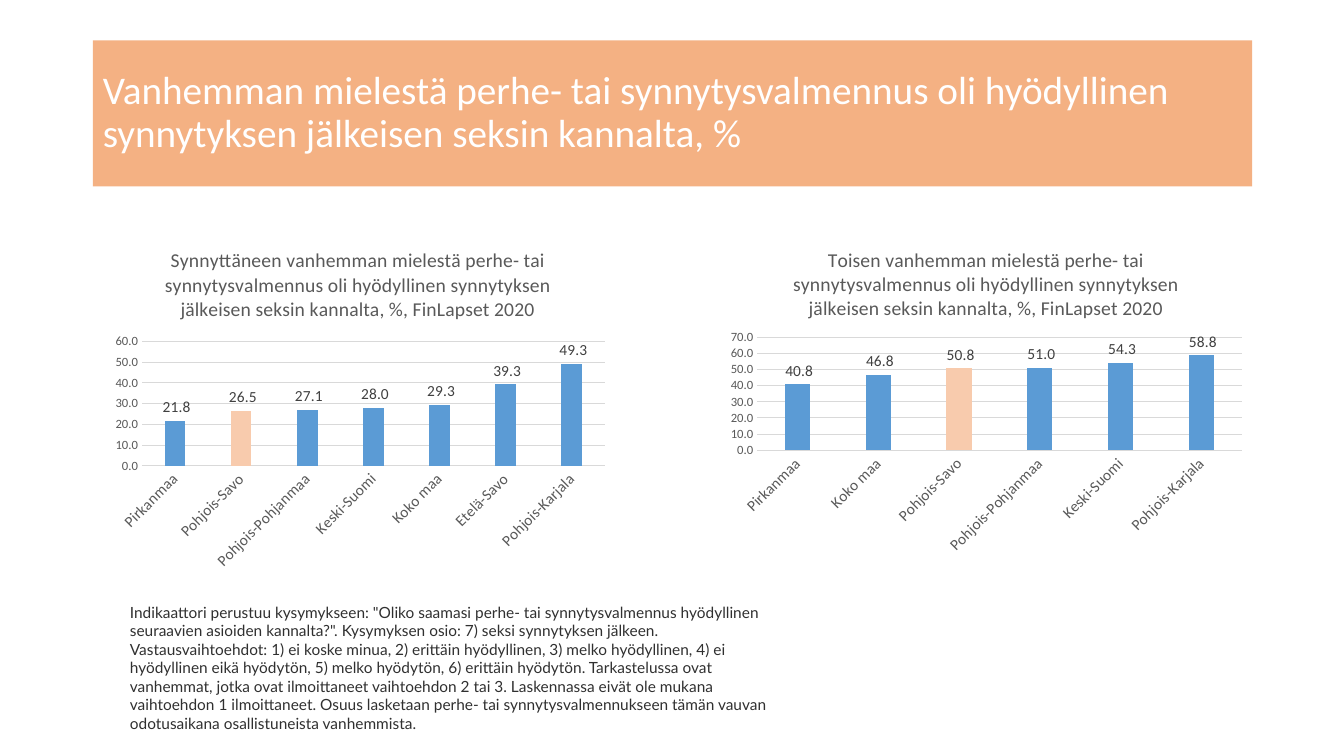
"""Build a slide comparing how two parent groups rated childbirth classes."""
from lxml import etree
from pptx import Presentation
from pptx import util as u
from pptx.chart.data import CategoryChartData
from pptx.dml.color import RGBColor
from pptx.enum import chart as charts, text
from pptx.oxml.ns import qn

TITLE = ("Vanhemman mielestä perhe- tai synnytysvalmennus oli hyödyllinen "
         "synnytyksen jälkeisen seksin kannalta, %")
CHART_TITLE = ("{} vanhemman mielestä perhe- tai synnytysvalmennus oli hyödyllinen "
               "synnytyksen jälkeisen seksin kannalta, %, FinLapset 2020")
NOTE = (
    'Indikaattori perustuu kysymykseen: "Oliko saamasi perhe- tai synnytysvalmennus '
    'hyödyllinen seuraavien asioiden kannalta?". Kysymyksen osio: 7) seksi synnytyksen '
    "jälkeen. Vastausvaihtoehdot: 1) ei koske minua, 2) erittäin hyödyllinen, 3) melko "
    "hyödyllinen, 4) ei hyödyllinen eikä hyödytön, 5) melko hyödytön, 6) erittäin "
    "hyödytön. Tarkastelussa ovat vanhemmat, jotka ovat ilmoittaneet vaihtoehdon 2 tai 3. "
    "Laskennassa eivät ole mukana vaihtoehdon 1 ilmoittaneet. Osuus lasketaan perhe- tai "
    "synnytysvalmennukseen tämän vauvan odotusaikana osallistuneista vanhemmista."
)
HIGHLIGHT = "Pohjois-Savo"
PANELS = [
    {"parent": "Synnyttäneen", "box": (1, 2.29, 5.1, 3.43), "top": 60,
     "plot": {"x": 0.08, "y": 0.32, "w": 0.9, "h": 0.36},
     "shares": {"Pirkanmaa": 21.8, "Pohjois-Savo": 26.5, "Pohjois-Pohjanmaa": 27.1,
                "Keski-Suomi": 28.0, "Koko maa": 29.3, "Etelä-Savo": 39.3,
                "Pohjois-Karjala": 49.3}},
    {"parent": "Toisen", "box": (7.14, 2.29, 5.28, 3.3), "top": 70,
     "plot": {"x": 0.07, "y": 0.32, "w": 0.91, "h": 0.34},
     "shares": {"Pirkanmaa": 40.8, "Koko maa": 46.8, "Pohjois-Savo": 50.8,
                "Pohjois-Pohjanmaa": 51.0, "Keski-Suomi": 54.3,
                "Pohjois-Karjala": 58.8}},
]
TITLE_BOX = (0.92, 0.4, 11.5, 1.45)
NOTE_BOX = (1.19, 5.93, 6.67, 1.4)
NUMBER_FORMAT = r"#\ ##0.0"


class Theme:
    """Colours and text styles."""
    banner, bar, accent, rule = "F4B183", "5B9BD5", "F8CBAD", "D9D9D9"
    title = ("Calibri", 28, "FFFFFF")
    note = ("Lato", 11, "303030")
    chart = ("Calibri", 10, "000000")
    heading = ("Calibri", 14, "595959")
    category = ("Calibri", 11, "595959")
    value = ("Calibri", 9, "595959")
    label = ("Calibri", 11, "404040")


def apply(target, **formats):
    """Set every given attribute."""
    for name, value in formats.items():
        setattr(target, name, value)


def style(font, look):
    """Give a font its name, size and colour."""
    name, size, colour = look
    apply(font, name=name, size=u.Pt(size), bold=False)
    font.color.rgb = RGBColor.from_string(colour)


def paint(fill, colour):
    """Fill with one colour."""
    fill.solid()
    fill.fore_color.rgb = RGBColor.from_string(colour)


def draw_rule(line):
    """Draw a thin grey line."""
    paint(line.fill, Theme.rule)
    line.width = u.Pt(0.75)


def place_plot(chart, shares):
    """Fix the inner plot area as shares of the chart."""
    area = chart.element.find(".//" + qn("c:plotArea"))
    for old in area.findall(qn("c:layout")):
        area.remove(old)
    layout = etree.Element(qn("c:layout"))
    manual = etree.SubElement(layout, qn("c:manualLayout"))
    settings = {"layoutTarget": "inner", "xMode": "edge", "yMode": "edge", **shares}
    for name, value in settings.items():
        etree.SubElement(manual, qn("c:" + name)).set("val", str(value))
    area.insert(0, layout)


def add_panel(page, panel):
    """Add one column chart."""
    data = CategoryChartData(number_format=NUMBER_FORMAT)
    data.categories = list(panel["shares"])
    data.add_series("Series 1", list(panel["shares"].values()))
    chart = page.shapes.add_chart(charts.XL_CHART_TYPE.COLUMN_CLUSTERED,
                                  *map(u.Inches, panel["box"]), data).chart
    style(chart.font, Theme.chart)
    apply(chart, has_legend=False, has_title=True)
    frame = chart.chart_title.text_frame
    frame.text = CHART_TITLE.format(panel["parent"])
    style(frame.paragraphs[0].runs[0].font, Theme.heading)
    chart.chart_title.include_in_layout = False
    place_plot(chart, panel["plot"])

    categories, values = chart.category_axis, chart.value_axis
    for axis, look in ((categories, Theme.category), (values, Theme.value)):
        apply(axis, major_tick_mark=charts.XL_TICK_MARK.NONE,
              minor_tick_mark=charts.XL_TICK_MARK.NONE)
        style(axis.tick_labels.font, look)
    draw_rule(categories.format.line)
    turned = chart.element.find(".//" + qn("c:catAx") + "//" + qn("a:bodyPr"))
    turned.set("rot", "-2700000")
    apply(values, minimum_scale=0, maximum_scale=panel["top"], major_unit=10,
          has_major_gridlines=True)
    apply(values.tick_labels, number_format=NUMBER_FORMAT, number_format_is_linked=False)
    values.format.line.fill.background()
    draw_rule(values.major_gridlines.format.line)

    plot = chart.plots[0]
    apply(plot, gap_width=219, overlap=-27, vary_by_categories=False, has_data_labels=True)
    apply(plot.data_labels, show_value=True, number_format=NUMBER_FORMAT,
          number_format_is_linked=False, position=charts.XL_LABEL_POSITION.OUTSIDE_END)
    style(plot.data_labels.font, Theme.label)
    series = plot.series[0]
    paint(series.format.fill, Theme.bar)
    special = list(panel["shares"]).index(HIGHLIGHT)
    paint(series.points[special].format.fill, Theme.accent)


def write(box, words, look, **formats):
    """Put one paragraph in a box."""
    frame = box.text_frame
    frame.text = words
    apply(frame, word_wrap=True, **formats)
    para = frame.paragraphs[0]
    para.alignment = text.PP_ALIGN.LEFT
    style(para.runs[0].font, look)
    return para


def main():
    deck = Presentation()
    apply(deck, slide_width=u.Inches(13.33), slide_height=u.Inches(7.5))
    page = deck.slides.add_slide(deck.slide_layouts[5])
    banner = page.shapes.title
    apply(banner, **dict(zip(("left", "top", "width", "height"), map(u.Inches, TITLE_BOX))))
    paint(banner.fill, Theme.banner)
    para = write(banner, TITLE, Theme.title, vertical_anchor=text.MSO_ANCHOR.MIDDLE,
                 auto_size=text.MSO_AUTO_SIZE.NONE)
    para.line_spacing = 0.9
    for panel in PANELS:
        add_panel(page, panel)
    note = page.shapes.add_textbox(*map(u.Inches, NOTE_BOX))
    write(note, NOTE, Theme.note, auto_size=text.MSO_AUTO_SIZE.SHAPE_TO_FIT_TEXT)
    deck.save("out.pptx")


if __name__ == "__main__":
    main()
